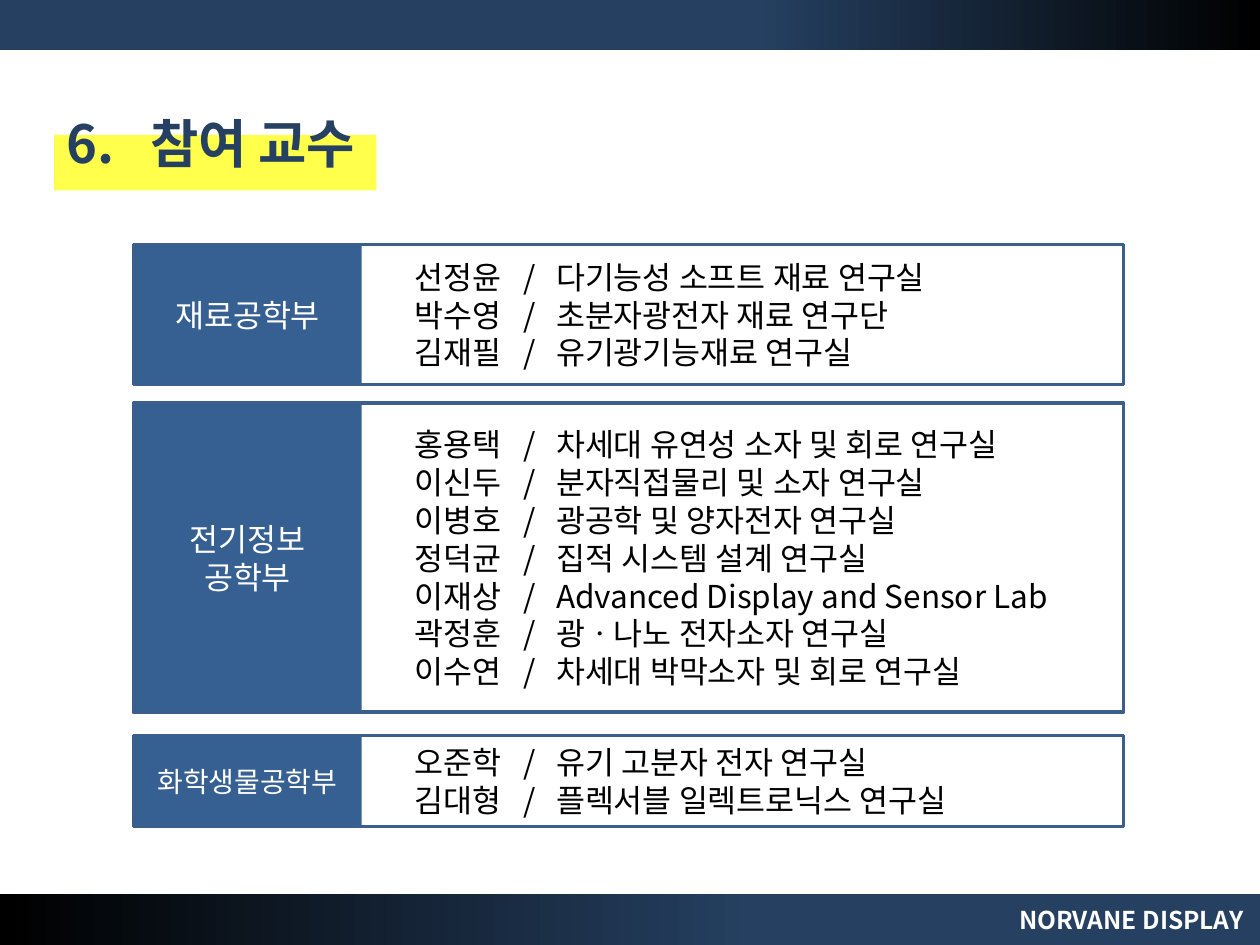
"""Build the slide listing participating professors by department."""
import pptx
import pptx.util
import pptx.dml.color
import pptx.enum.shapes
import pptx.enum.text
import pptx.oxml
import pptx.oxml.ns
from lxml import etree

Cm = pptx.util.Cm
RGBColor = pptx.dml.color.RGBColor
ALIGN = pptx.enum.text.PP_ALIGN
ANCHOR = pptx.enum.text.MSO_ANCHOR
qn = pptx.oxml.ns.qn

NAVY = RGBColor(0x25, 0x40, 0x61)
BLUE = RGBColor(0x37, 0x60, 0x92)
FRAME = RGBColor(0x3A, 0x5F, 0x8C)
YELLOW = RGBColor(0xFF, 0xFF, 0x00)
BLACK = RGBColor(0, 0, 0)
WHITE = RGBColor(0xFF, 0xFF, 0xFF)
FONT = "Noto Sans CJK KR"

HEADING = ("6.", "참여 교수")
FOOTER = "NORVANE DISPLAY"
DEPARTMENTS = [
    {"label": ["재료공학부"], "size": 18, "top": 4.93, "height": 2.82, "text_width": 11.46,
     "members": [("선정윤", "다기능성 소프트 재료 연구실"),
                 ("박수영", "초분자광전자 재료 연구단"),
                 ("김재필", "유기광기능재료 연구실")]},
    {"label": ["전기정보", "공학부"], "size": 18, "top": 8.13, "height": 6.23, "text_width": 13.51,
     "members": [("홍용택", "차세대 유연성 소자 및 회로 연구실"),
                 ("이신두", "분자직접물리 및 소자 연구실"),
                 ("이병호", "광공학 및 양자전자 연구실"),
                 ("정덕균", "집적 시스템 설계 연구실"),
                 ("이재상", "Advanced Display and Sensor Lab"),
                 ("곽정훈", "광ㆍ나노 전자소자 연구실"),
                 ("이수연", "차세대 박막소자 및 회로 연구실")]},
    {"label": ["화학생물공학부"], "size": 16, "top": 14.83, "height": 1.83, "text_width": 11.89,
     "members": [("오준학", "유기 고분자 전자 연구실"),
                 ("김대형", "플렉서블 일렉트로닉스 연구실")]},
]
SLIDE_WIDTH, SLIDE_HEIGHT, BAR_HEIGHT = 25.4, 19.05, 1.02
BAND_LEFT, BAND_WIDTH, LABEL_WIDTH, MEMBERS_LEFT = 2.69, 19.96, 4.6, 8.1
LINE_HEIGHT, TEXT_PADDING = 0.77, 0.25
MEMBER_TABS, HEADING_TABS = (2.2, 2.86), (1.68,)


def add_rectangle(slide, left, top, width, height):
    rectangle = slide.shapes.add_shape(
        pptx.enum.shapes.MSO_SHAPE.RECTANGLE, Cm(left), Cm(top), Cm(width), Cm(height))
    rectangle.shadow.inherit = False
    rectangle.line.fill.background()
    return rectangle


def fill_solid(shape, color):
    shape.fill.solid()
    shape.fill.fore_color.rgb = color


def add_bar(slide, top, angle, fade_start):
    bar = add_rectangle(slide, 0, top, SLIDE_WIDTH, BAR_HEIGHT)
    bar.fill.gradient()
    bar.fill.gradient_angle = angle
    for stop, position, color in zip(bar.fill.gradient_stops, (fade_start, 1), (NAVY, BLACK)):
        stop.position = position
        stop.color.rgb = color


def write(shape, lines, size, color, bold=False, align=ALIGN.LEFT,
          anchor=ANCHOR.TOP, wrap=True, tabs=()):
    frame = shape.text_frame
    frame_format = {"word_wrap": wrap, "vertical_anchor": anchor,
                    "auto_size": pptx.enum.text.MSO_AUTO_SIZE.NONE}
    for name, value in frame_format.items():
        setattr(frame, name, value)
    font_format = {"name": FONT, "size": pptx.util.Pt(size), "bold": bold}
    for number, line in enumerate(lines):
        paragraph = frame.add_paragraph() if number else frame.paragraphs[0]
        paragraph.alignment = align
        run = paragraph.add_run()
        run.text = line
        for name, value in font_format.items():
            setattr(run.font, name, value)
        run.font.color.rgb = color
        etree.SubElement(run.font._element, qn("a:ea"), typeface=FONT)
        if tabs:
            properties = paragraph._p.get_or_add_pPr()
            tab_list = etree.SubElement(properties, qn("a:tabLst"))
            for position in tabs:
                etree.SubElement(tab_list, qn("a:tab"), pos=str(Cm(position)), algn="l")


def add_heading(slide):
    highlight = add_rectangle(slide, 1.09, 2.72, 6.5, 1.12)
    fill_solid(highlight, YELLOW)
    yellow = highlight.fill._xPr.find(qn("a:solidFill"))[0]
    etree.SubElement(yellow, qn("a:alpha"), val="70000")
    heading = slide.shapes.title
    place = {"left": 1.09, "top": 2.11, "width": 6.5, "height": 1.55}
    for name, value in place.items():
        setattr(heading, name, Cm(value))
    write(heading, ["\t".join(HEADING)], 30, NAVY, bold=True, tabs=HEADING_TABS)
    highlight.element.addnext(heading.element)


def add_department(slide, department):
    top, height = department["top"], department["height"]
    label = add_rectangle(slide, BAND_LEFT, top, LABEL_WIDTH, height)
    fill_solid(label, BLUE)
    write(label, department["label"], department["size"], WHITE,
          align=ALIGN.CENTER, anchor=ANCHOR.MIDDLE)

    text_height = LINE_HEIGHT * len(department["members"]) + TEXT_PADDING
    members = slide.shapes.add_textbox(
        Cm(MEMBERS_LEFT), Cm(top + (height - text_height) / 2),
        Cm(department["text_width"]), Cm(text_height))
    lines = [f"{professor}\t/\t{lab}" for professor, lab in department["members"]]
    write(members, lines, 18, BLACK, anchor=ANCHOR.MIDDLE, tabs=MEMBER_TABS)

    frame = add_rectangle(slide, BAND_LEFT, top, BAND_WIDTH, height)
    frame.fill.background()
    frame.line.color.rgb = FRAME
    frame.line.width = pptx.util.Pt(2)


def main():
    deck = pptx.Presentation()
    deck.slide_width, deck.slide_height = Cm(SLIDE_WIDTH), Cm(SLIDE_HEIGHT)
    slide = deck.slides.add_slide(deck.slide_layouts[5])
    add_bar(slide, 0, 0, 0.6)
    add_bar(slide, SLIDE_HEIGHT - BAR_HEIGHT, 180, 0.4)
    footer = slide.shapes.add_textbox(Cm(20.12), Cm(18.11), Cm(5.2), Cm(0.86))
    write(footer, [FOOTER], 14, WHITE, bold=True, align=ALIGN.RIGHT, wrap=False)
    add_heading(slide)
    for department in DEPARTMENTS:
        add_department(slide, department)
    deck.save("out.pptx")


if __name__ == "__main__":
    main()
